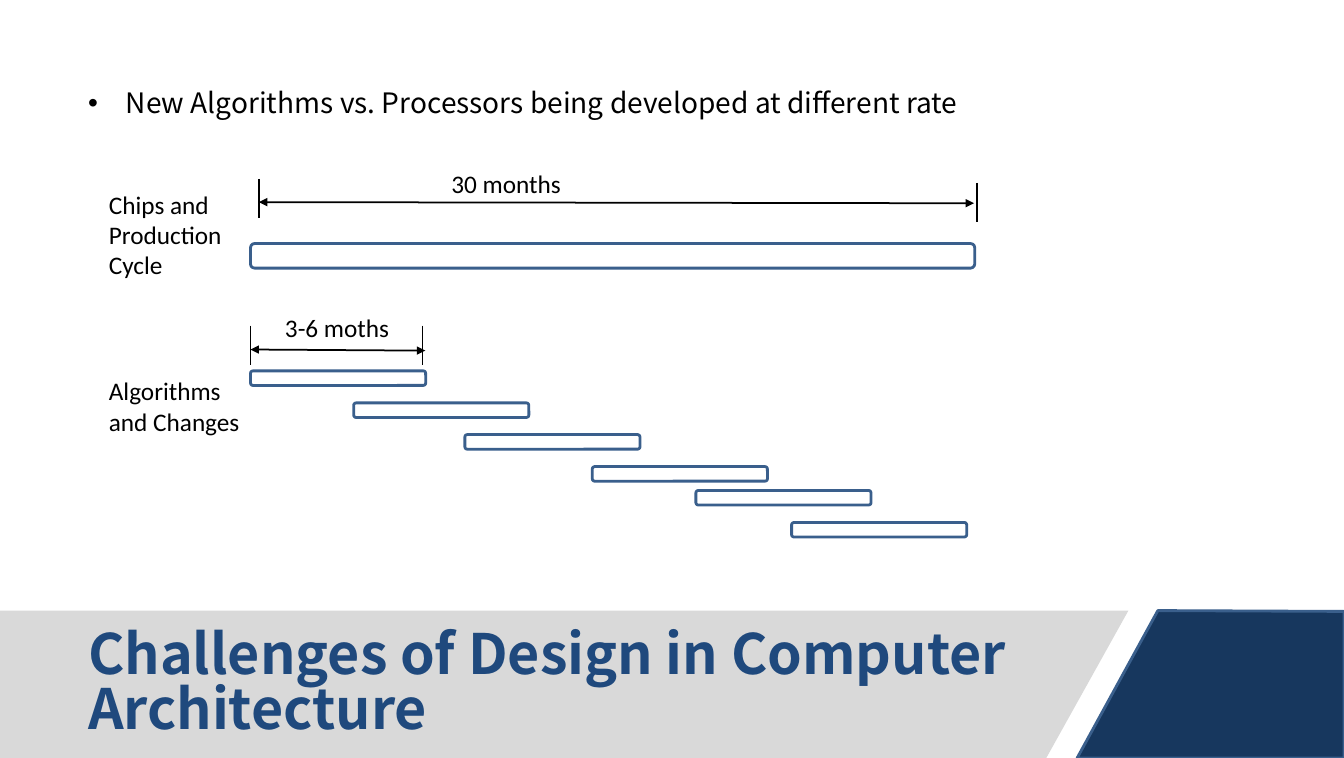
import pptx
import pptx.util
import pptx.dml.color
import pptx.enum.shapes
import pptx.enum.text
import pptx.oxml
import pptx.oxml.ns

Pt = pptx.util.Pt

# Content, with all lengths in points
TITLE = "Challenges of Design in Computer Architecture"
BULLET = "New Algorithms vs. Processors being developed at different rate"
HEADING_FONT, LABEL_FONT = "Noto Sans CJK SC", "Calibri"
COLORS = {"navy": "17375E", "outline": "3A5F8C", "band": "D9D9D9",
          "title": "1F497D", "text": "000000"}

BAND = [(0, 435), (804, 435), (745.5, 540), (0, 540)]
CORNER = [(825, 435), (957.6, 435.6), (957.6, 540), (767.5, 540)]

# Labels: text, left, top, width, height
LABELS = [
    ("Chips and Production Cycle", 70.5, 131, 104.5, 73),
    ("30 months", 314.5, 116, 96.5, 29),
    ("Algorithms and Changes", 70.5, 264, 117.5, 51),
    ("3-6 moths", 196, 219, 96.5, 29),
]
# Spans: arrow from, arrow to, then (x, top) of the two end ticks
SPANS = [
    ((184.5, 144), (694, 144.8), [(184.5, 127.5), (696, 130.3)]),
    ((178.5, 249), (303, 249.8), [(178.5, 232), (301, 232)]),
]
TICK_HEIGHT = 28

# Bars: left and top
CHIP_BAR = (178.5, 173.5, 516, 17.5)
ALGORITHM_SIZE = (124.8, 10.4)
ALGORITHM_STARTS = [(178.5, 264.2), (252, 287), (331.2, 309.6),
                    (422, 332.4), (495.8, 349.4), (564, 372.2)]


def color(name):
    return pptx.dml.color.RGBColor.from_string(COLORS[name])


def set_font(paragraph, face, size, tone, bold=False):
    font = paragraph.font
    font.name, font.size, font.bold = face, Pt(size), bold
    font.color.rgb = color(tone)


def place(part, left, top, width, height):
    part.left, part.top = Pt(left), Pt(top)
    part.width, part.height = Pt(width), Pt(height)


def add_panel(points, fill, outline=None):
    corners = [(Pt(x), Pt(y)) for x, y in points]
    builder = shapes.build_freeform(*corners[0])
    builder.add_line_segments(corners[1:], close=True)
    panel = builder.convert_to_shape()
    panel.shadow.inherit = False
    panel.fill.solid()
    panel.fill.fore_color.rgb = color(fill)
    if outline:
        panel.line.color.rgb = color(outline)
        panel.line.width = Pt(2)
    else:
        panel.line.fill.background()
    return panel


def add_bar(left, top, width, height):
    bar = shapes.add_shape(pptx.enum.shapes.MSO_SHAPE.ROUNDED_RECTANGLE,
                           Pt(left), Pt(top), Pt(width), Pt(height))
    bar.shadow.inherit = False
    bar.fill.background()
    bar.line.color.rgb = color("outline")
    bar.line.width = Pt(2)


def add_line(start, end, arrows=False):
    line = shapes.add_connector(pptx.enum.shapes.MSO_CONNECTOR.STRAIGHT,
                                *map(Pt, start + end))
    line.line.color.rgb = color("text")
    line.line.width = Pt(1.25)
    if arrows:
        for tag in ("a:headEnd", "a:tailEnd"):
            end_mark = pptx.oxml.parse_xml(
                f'<{tag} {pptx.oxml.ns.nsdecls("a")} type="triangle"/>')
            line.line._get_or_add_ln().append(end_mark)
    line._element.spPr.append(pptx.oxml.parse_xml(
        f'<a:effectLst {pptx.oxml.ns.nsdecls("a")}/>'))


deck = pptx.Presentation()
deck.slide_width, deck.slide_height = Pt(957.6), Pt(540)
slide = deck.slides.add_slide(deck.slide_layouts[1])
shapes = slide.shapes

# Footer band and corner, behind the placeholders
for panel in (add_panel(BAND, "band"), add_panel(CORNER, "navy", "outline")):
    shapes._spTree.insert(2, panel._element)

# Title and bullet
title, body = slide.placeholders
place(title, 55.5, 436.3, 730, 104.4)
place(body, 55.5, 59.8, 845, 342.7)
for holder, text, size, tone, spacing in (
        (title, TITLE, 39.6, "title", 0.82), (body, BULLET, 20, "text", 0.9)):
    frame = holder.text_frame
    frame.text = text
    frame.auto_size = pptx.enum.text.MSO_AUTO_SIZE.NONE
    paragraph = frame.paragraphs[0]
    paragraph.alignment = pptx.enum.text.PP_ALIGN.LEFT
    paragraph.line_spacing = spacing
    paragraph.space_before = Pt(0)
    set_font(paragraph, HEADING_FONT, size, tone, bold=holder is title)
title.text_frame.vertical_anchor = pptx.enum.text.MSO_ANCHOR.MIDDLE

# Timeline bars
add_bar(*CHIP_BAR)
for start in ALGORITHM_STARTS:
    add_bar(*start, *ALGORITHM_SIZE)

# Duration arrows with end ticks
for start, end, ticks in SPANS:
    add_line(start, end, arrows=True)
    for x, top in ticks:
        add_line((x, top), (x, top + TICK_HEIGHT))

# Labels
for text, *box in LABELS:
    label = shapes.add_textbox(*map(Pt, box))
    label.text_frame.word_wrap = True
    label.text_frame.text = text
    set_font(label.text_frame.paragraphs[0], LABEL_FONT, 18, "text")

deck.save("out.pptx")
